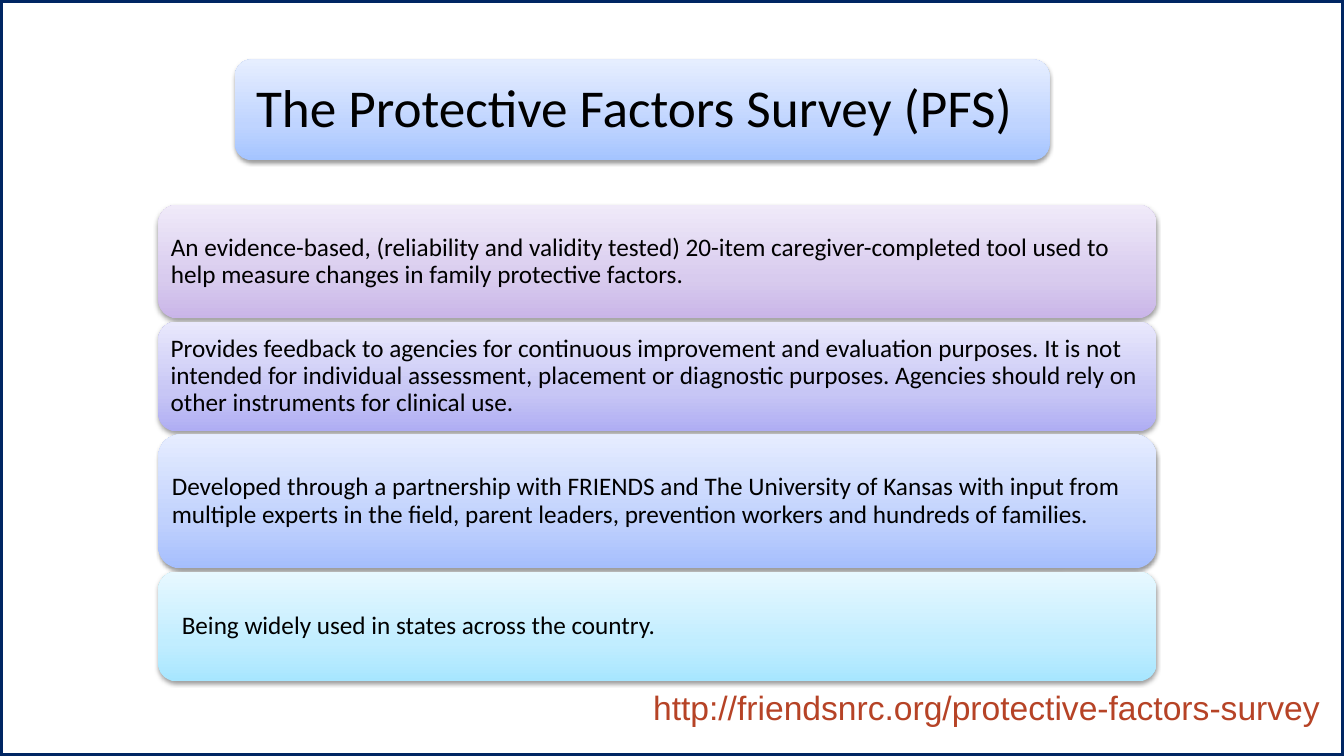
from copy import deepcopy
from dataclasses import dataclass

from lxml.etree import SubElement
from pptx import Presentation
from pptx.dml.color import RGBColor
from pptx.enum.shapes import MSO_SHAPE as Shape
from pptx.enum.text import MSO_ANCHOR as Anchor, MSO_AUTO_SIZE as AutoSize, PP_ALIGN as Align
from pptx.oxml.ns import qn
from pptx.util import Inches, Pt


@dataclass(frozen=True)
class Theme:
    """Colours, fonts and type sizes of the slide."""
    ink: str = "000000"
    border: str = "002663"
    address: str = "B64326"
    title_fill: tuple = ("A4C4FF", "BFD4FF", "E6EEFF")
    purple: tuple = ("C9B5E8", "D8CBEE", "F0EAF9")
    violet: tuple = ("AFADF3", "C7C6F5", "E9E8FC")
    blue: tuple = ("A5BEFD", "C0D1FD", "E6EDFF")
    cyan: tuple = ("A7E6FF", "C1EDFF", "E7F8FF")
    stops: tuple = (0, 0.35, 1)
    text_font: str = "Calibri"
    address_font: str = "Arial"
    title_size: int = 38
    text_size: int = 18
    address_size: int = 24


THEME = Theme()
FEATURES = [
    (1.13, THEME.purple, 0,
     "An evidence-based, (reliability and validity tested) 20-item caregiver-completed "
     "tool used to help measure changes in family protective factors."),
    (1.09, THEME.violet, 0,
     "Provides feedback to agencies for continuous improvement and evaluation purposes. "
     "It is not intended for individual assessment, placement or diagnostic purposes. "
     "Agencies should rely on other instruments for clinical use."),
    (1.33, THEME.blue, 0,
     "Developed through a partnership with FRIENDS and The University of Kansas with input "
     "from multiple experts in the field, parent leaders, prevention workers and hundreds "
     "of families."),
    (1.09, THEME.cyan, 0.11, "Being widely used in states across the country."),
]


def write(shape, text, size=THEME.text_size, font=THEME.text_font, color=THEME.ink,
          align=Align.LEFT, anchor=Anchor.MIDDLE, inset=0.07, indent=0,
          line_spacing=0.9, wrap=True):
    """Put formatted text in a shape."""
    frame = shape.text_frame
    frame.text = text
    frame.word_wrap = wrap
    frame.auto_size = AutoSize.NONE
    frame.vertical_anchor = anchor
    frame.margin_left = Inches(inset + indent)
    frame.margin_top = frame.margin_right = frame.margin_bottom = Inches(inset)
    paragraph = frame.paragraphs[0]
    paragraph.alignment = align
    paragraph.line_spacing = line_spacing
    paragraph.font.size = Pt(size)
    paragraph.font.name = font
    paragraph.font.color.rgb = RGBColor.from_string(color)


def add_card(slide, box, colors):
    """Add a rounded card with a vertical gradient and a soft shadow."""
    card = slide.shapes.add_shape(Shape.ROUNDED_RECTANGLE, *map(Inches, box))
    card.line.fill.background()
    card.fill.gradient()
    card.fill.gradient_angle = 90
    stop_list = card.element.spPr.find(".//" + qn("a:gsLst"))
    stop_list.append(deepcopy(stop_list[0]))
    for stop, position, color in zip(card.fill.gradient_stops, THEME.stops, colors):
        stop.position = position
        stop.color.rgb = RGBColor.from_string(color)
    card.shadow.inherit = False
    effects = card.element.spPr.find(qn("a:effectLst"))
    shadow = SubElement(effects, qn("a:outerShdw"), blurRad=str(Pt(3.1)),
                        dist=str(Pt(1.6)), dir="5400000", rotWithShape="0")
    shade = SubElement(shadow, qn("a:srgbClr"), val=THEME.ink)
    SubElement(shade, qn("a:alpha"), val="38000")
    return card


def add_border(slide, box):
    """Draw the frame around the slide."""
    border = slide.shapes.add_shape(Shape.RECTANGLE, *map(Inches, box))
    border.shadow.inherit = False
    border.fill.background()
    border.line.color.rgb = RGBColor.from_string(THEME.border)
    border.line.width = Pt(4.5)


def add_heading(slide, box):
    """Place the title on its card."""
    left, top, width, height = box
    pad = 0.05
    card = add_card(slide, box, THEME.title_fill)
    title = slide.shapes.title
    title.left, title.top = Inches(left + pad), Inches(top + pad)
    title.width, title.height = Inches(width - 2 * pad), Inches(height - 2 * pad)
    write(title, "The Protective Factors Survey (PFS)", size=THEME.title_size, inset=0.16)
    title.element.addprevious(card.element)


def add_features(slide, box, gap=0.03):
    """Stack the feature cards downwards from the top of the box."""
    left, top, width = box
    for height, colors, indent, text in FEATURES:
        write(add_card(slide, (left, top, width, height), colors), text, indent=indent)
        top += height + gap


def add_address(slide, box):
    """Add the web address at the lower right."""
    address = slide.shapes.add_textbox(*map(Inches, box))
    write(address, "http://friendsnrc.org/protective-factors-survey",
          size=THEME.address_size, font=THEME.address_font, color=THEME.address,
          align=Align.RIGHT, anchor=Anchor.TOP, inset=0.1, line_spacing=1, wrap=False)
    address.text_frame.margin_top = address.text_frame.margin_bottom = Inches(0.05)


def main():
    """Build and save the slide."""
    deck = Presentation()
    deck.slide_width, deck.slide_height = Inches(13.33), Inches(7.5)
    slide = deck.slides.add_slide(deck.slide_layouts.get_by_name("Title Only"))
    add_border(slide, (0, 0, 13.33, 7.5))
    add_heading(slide, (2.33, 0.59, 8.08, 1))
    add_features(slide, (1.57, 2.03, 9.9))
    add_address(slide, (6.31, 6.77, 6.88, 0.5))
    deck.save("out.pptx")


if __name__ == "__main__":
    main()
